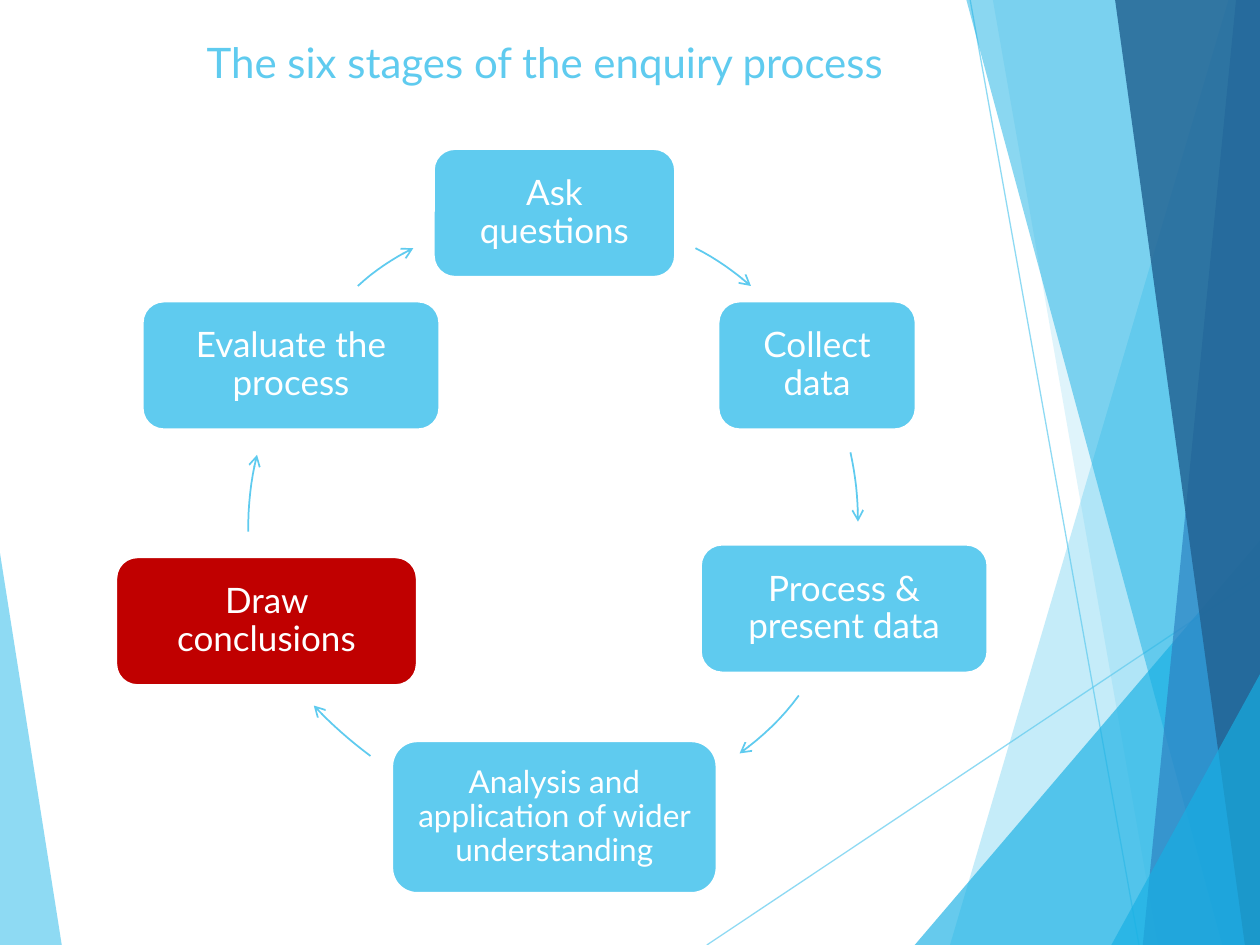
from dataclasses import dataclass

from pptx import Presentation
from pptx import util as u
from pptx.dml.color import RGBColor
from pptx.enum import shapes, text
from pptx.oxml import ns
from lxml import etree


@dataclass(frozen=True)
class Theme:
    font: str = "Lato"
    sky: str = "5FCBEF"
    cyan: str = "17B0E4"
    blue: str = "2E83C3"
    navy: str = "226292"
    red: str = "C00000"
    white: str = "FFFFFF"
    title_size: int = 24
    stage_size: int = 20
    long_stage_size: int = 18


theme = Theme()


def set_alpha(shape, percent):
    """Make every colour of the shape's fill and line partly transparent."""
    for color in shape.element.spPr.iter(ns.qn("a:srgbClr")):
        etree.SubElement(color, ns.qn("a:alpha")).set("val", str(percent * 1000))


def add_outline(points, closed):
    corners = [(u.Inches(x), u.Inches(y)) for x, y in points]
    builder = slide.shapes.build_freeform(*corners[0], scale=1.0)
    builder.add_line_segments(corners[1:], close=closed)
    outline = builder.convert_to_shape()
    outline.shadow.inherit = False
    return outline


prs = Presentation()
prs.slide_width, prs.slide_height = u.Inches(10), u.Inches(7.5)
slide = prs.slides.add_slide(prs.slide_layouts[5])

# Title
title = slide.shapes.title
title.left, title.top = u.Inches(1.54), u.Inches(0.24)
title.width, title.height = u.Inches(6.94), u.Inches(1.44)
title.text_frame.text = "The six stages of the enquiry process"
title_format = {"vertical_anchor": text.MSO_ANCHOR.TOP, "word_wrap": True,
                "auto_size": text.MSO_AUTO_SIZE.NONE}
for name, value in title_format.items():
    setattr(title.text_frame, name, value)
heading = title.text_frame.paragraphs[0]
heading.alignment = text.PP_ALIGN.LEFT
heading.font.name, heading.font.size = theme.font, u.Pt(theme.title_size)
heading.font.color.rgb = RGBColor.from_string(theme.sky)

# Faceted edges: thin rays lie above the left facet and below the right ones
left_facet = ([(0, 4.39), (0.49, 7.5), (0, 7.5)], theme.sky, 70)
right_facets = [
    ([(9.75, 0), (7.54, 7.5), (10, 7.5), (10, 0)], theme.sky, 36),
    ([(7.88, 0), (9.19, 7.5), (10, 7.5), (10, 0)], theme.sky, 20),
    ([(7.26, 7.5), (10, 4.29), (10, 7.5)], theme.cyan, 66),
    ([(7.67, 0), (9.7, 7.5), (10, 7.5), (10, 0)], theme.cyan, 50),
    ([(9.81, 0), (9.07, 7.5), (10, 7.5), (10, 0)], theme.blue, 70),
    ([(8.85, 0), (9.88, 7.5), (10, 7.5), (10, 0)], theme.navy, 82),
    ([(8.82, 7.5), (10, 5.35), (10, 7.5)], theme.cyan, 66),
]
rays = [(5.61, 7.5, 10, 4.57), (7.7, 0, 9.04, 7.5)]

for ends in rays:
    ray = slide.shapes.add_connector(shapes.MSO_CONNECTOR.STRAIGHT, *map(u.Inches, ends))
    ray.line.width = u.Pt(0.75)
    ray.line.color.rgb = RGBColor.from_string(theme.sky)
    set_alpha(ray, 70)
    etree.SubElement(ray.element.spPr, ns.qn("a:effectLst"))

for points, color, opacity in [left_facet, *right_facets]:
    facet = add_outline(points, closed=True)
    facet.fill.solid()
    facet.fill.fore_color.rgb = RGBColor.from_string(color)
    facet.line.fill.background()
    set_alpha(facet, opacity)

# Stages, clockwise from the top: label, box, colour, type size, inset
stages = [
    ("Ask questions", (3.44, 1.18, 1.92, 1.02), theme.sky, theme.stage_size, 0.08),
    ("Collect data", (5.7, 2.39, 1.57, 1.02), theme.sky, theme.stage_size, 0.08),
    ("Process & present data", (5.56, 4.32, 2.28, 1.02), theme.sky, theme.stage_size, 0.08),
    ("Analysis and application of wider understanding", (3.11, 5.88, 2.58, 1.21),
     theme.sky, theme.long_stage_size, 0.07),
    ("Draw conclusions", (0.92, 4.42, 2.39, 1.02), theme.red, theme.stage_size, 0.08),
    ("Evaluate the process", (1.13, 2.39, 2.36, 1.02), theme.sky, theme.stage_size, 0.08),
]
for label, box, color, size, inset in stages:
    stage = slide.shapes.add_shape(shapes.MSO_SHAPE.ROUNDED_RECTANGLE, *map(u.Inches, box))
    stage.shadow.inherit = False
    stage.fill.solid()
    stage.fill.fore_color.rgb = RGBColor.from_string(color)
    stage.line.color.rgb = RGBColor.from_string(theme.white)
    stage.line.width = u.Pt(1.5)
    frame = stage.text_frame
    frame.text = label
    frame.word_wrap = True
    frame.vertical_anchor = text.MSO_ANCHOR.MIDDLE
    for side in ("left", "right", "top", "bottom"):
        setattr(frame, f"margin_{side}", u.Inches(inset))
    caption = frame.paragraphs[0]
    caption.alignment = text.PP_ALIGN.CENTER
    caption.line_spacing = 0.9
    caption.font.name, caption.font.size = theme.font, u.Pt(size)
    caption.font.color.rgb = RGBColor.from_string(theme.white)

# Curved arrows between stages: start, two Bezier controls, end
arcs = [
    ((5.52, 1.97), (5.68, 2.05), (5.82, 2.15), (5.96, 2.27)),
    ((6.75, 3.59), (6.79, 3.77), (6.81, 3.95), (6.81, 4.14)),
    ((6.34, 5.52), (6.21, 5.7), (6.05, 5.85), (5.87, 5.98)),
    ((2.94, 6), (2.78, 5.88), (2.63, 5.75), (2.49, 5.6)),
    ((1.97, 4.22), (1.97, 4.01), (1.99, 3.81), (2.04, 3.61)),
    ((2.84, 2.27), (2.97, 2.15), (3.12, 2.05), (3.28, 1.97)),
]
steps = 8
for controls in arcs:
    curve = []
    for step in range(steps + 1):
        t = step / steps
        weights = ((1 - t) ** 3, 3 * t * (1 - t) ** 2, 3 * t ** 2 * (1 - t), t ** 3)
        curve.append([sum(w * c for w, c in zip(weights, axis)) for axis in zip(*controls)])
    arrow = add_outline(curve, closed=False)
    arrow.fill.background()
    arrow.line.color.rgb = RGBColor.from_string(theme.sky)
    arrow.line.width = u.Pt(1)
    outline_xml = arrow.element.spPr.find(ns.qn("a:ln"))
    etree.SubElement(outline_xml, ns.qn("a:tailEnd")).set("type", "arrow")

prs.save("out.pptx")
